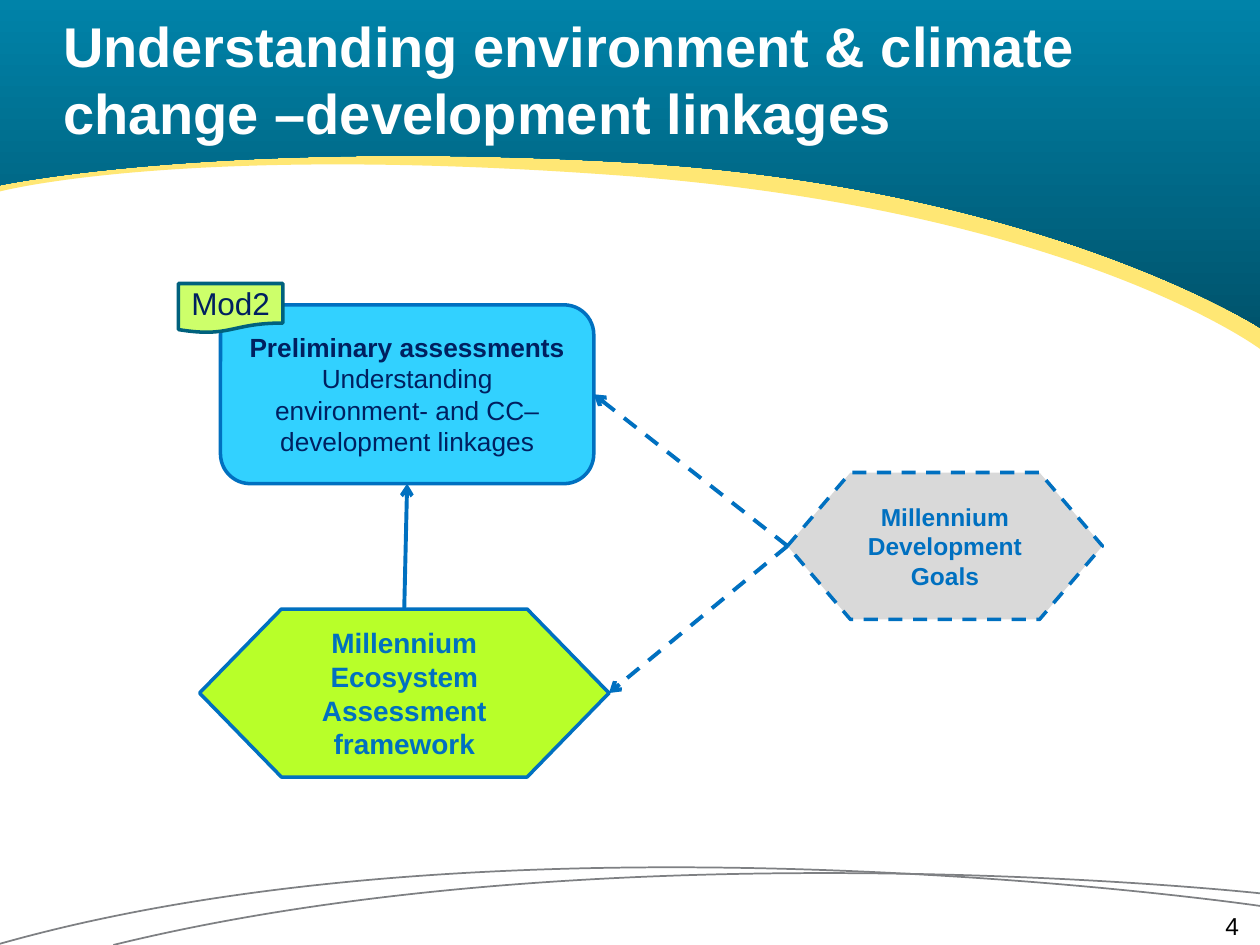
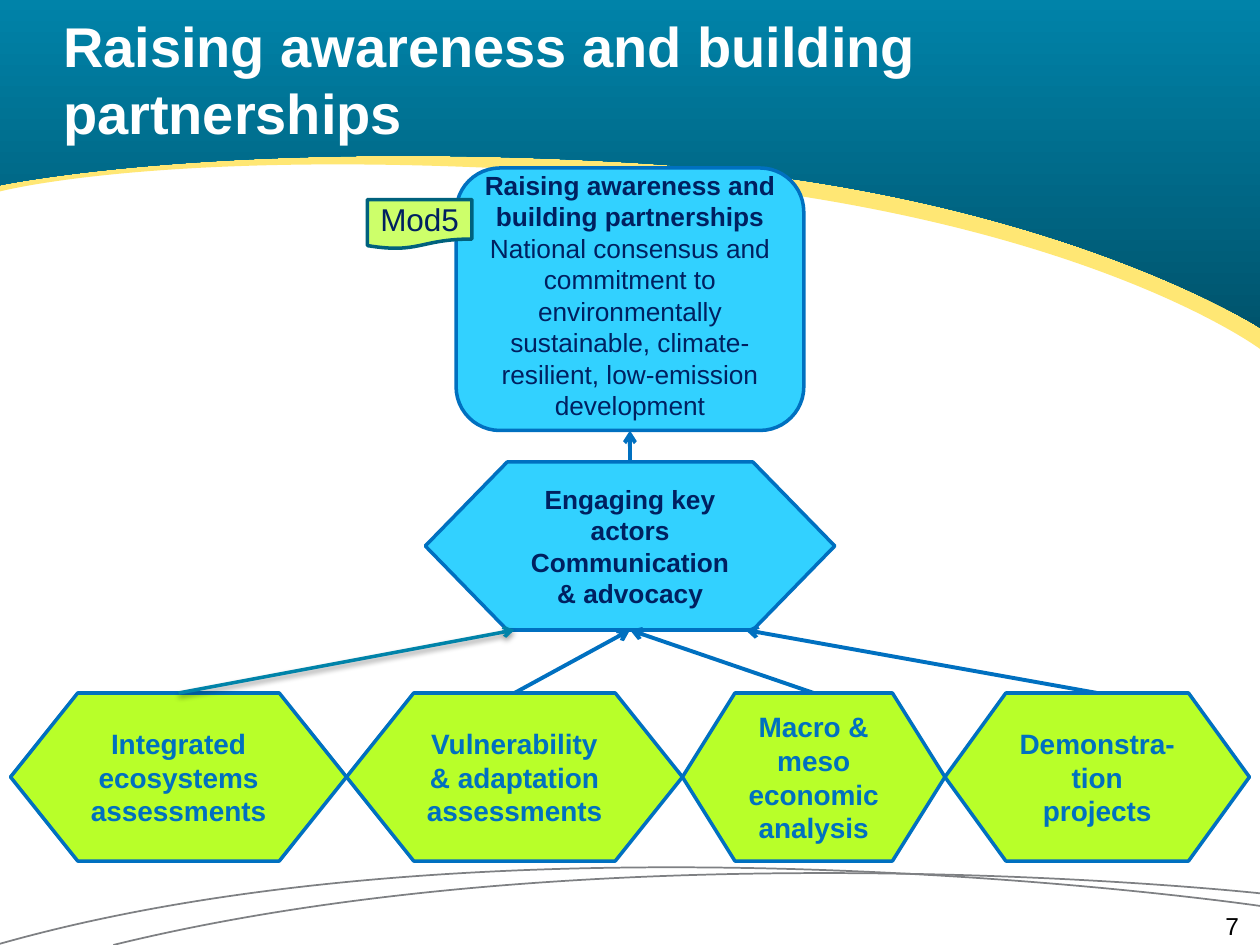
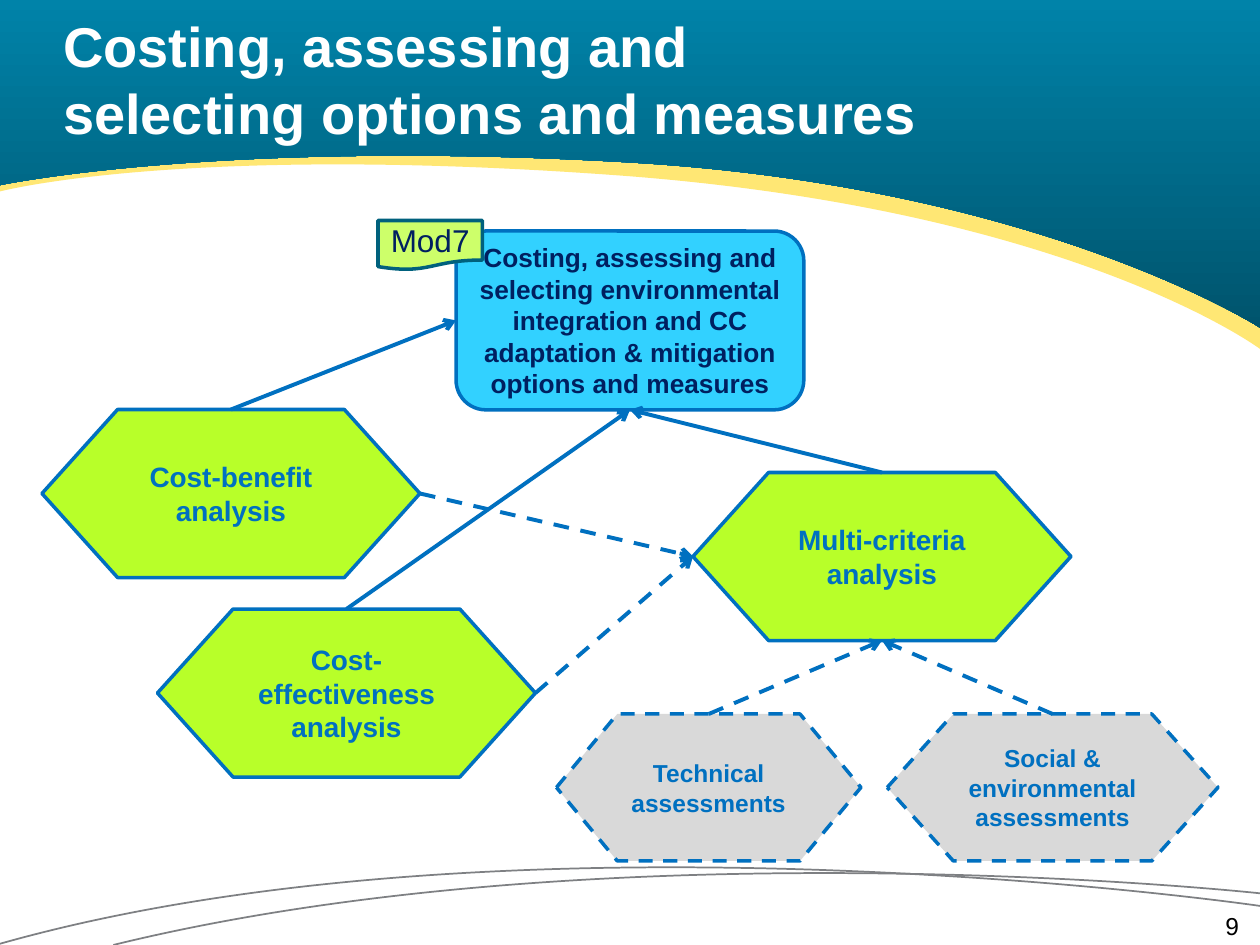
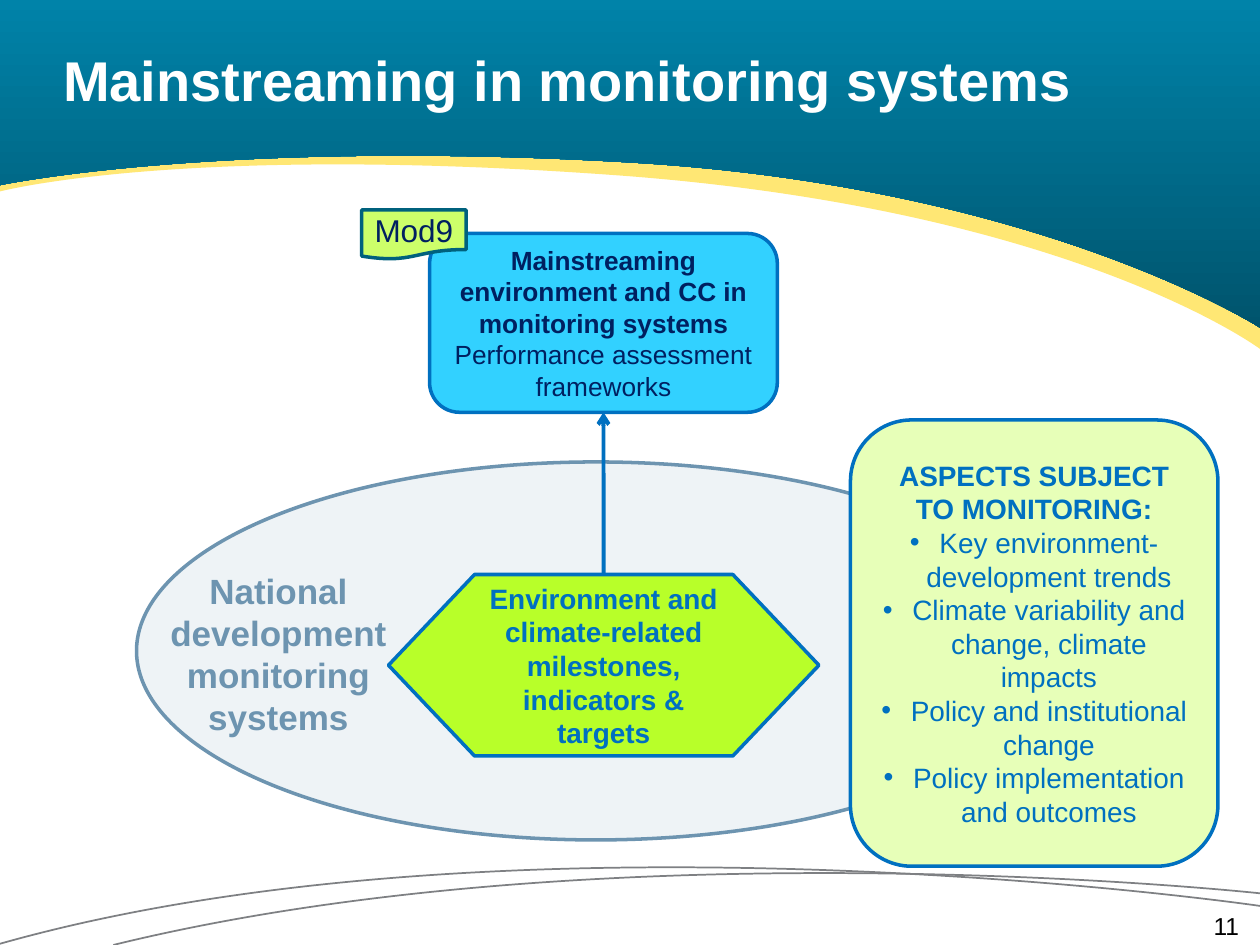
from lxml import etree
from pptx import Presentation
from pptx import util as u
from pptx.dml import color
from pptx.enum import dml, shapes, text
from pptx.oxml import ns

Pt = u.Pt
KIND = shapes.MSO_SHAPE
LEFT, MID, RIGHT = (text.PP_ALIGN.LEFT, text.PP_ALIGN.CENTER,
                    text.PP_ALIGN.RIGHT)
TOP, WEST, BASE, EAST = range(4)
BLUE, NAVY, TEAL, SLATE = "0070C0", "002060", "0083A9", "6D94B0"
SKY, LIME, GREY = "32D1FF", "B8FF29", "D9D9D9"
WIDE, HIGH = 720, 540
BOX = 198.7

ARCS = [
    [(720, 510.5), (720, 510.5), (349.2, 470.2), (64.8, 540)],
    [(720, 517.7), (720, 517.7), (295.2, 455.8), (0, 539.3)],
]
GOLD = [(720, 199.4), (720, 199.4), (614.9, 121), (360.7, 100.8),
        (105.8, 81.4), (0, 109.4), (0, 109.4)]
SEA = [(720, 187.2), (720, 187.2), (594.7, 106.6), (360.7, 92.9),
       (126, 79.2), (0, 105.8), (0, 105.8)]


def rgb(code):
    return color.RGBColor.from_string(code)


def add(parent, tag, **attrs):
    node = etree.SubElement(parent, ns.qn(tag))
    for key, val in attrs.items():
        node.set(key, str(val))
    return node


def bend(form, count):
    lines = list(form.element.iter(ns.qn("a:lnTo")))[:count]
    for i in range(0, count, 3):
        arc = etree.Element(ns.qn("a:cubicBezTo"))
        lines[i].addprevious(arc)
        for line in lines[i:i + 3]:
            arc.append(line[0])
            line.getparent().remove(line)


def write(frame, lines, size=16, ink=BLUE, bold=True, align=MID,
          anchor=text.MSO_ANCHOR.MIDDLE, inset=None):
    frame.word_wrap = True
    frame.auto_size = text.MSO_AUTO_SIZE.NONE
    frame.vertical_anchor = anchor
    if inset is not None:
        frame.margin_left = frame.margin_right = Pt(inset)
        frame.margin_top = frame.margin_bottom = Pt(inset)
    for i, line in enumerate([lines] if isinstance(lines, str) else lines):
        words, opts = line if isinstance(line, tuple) else (line, {})
        para = frame.paragraphs[0] if i == 0 else frame.add_paragraph()
        para.text = words
        para.alignment = align
        if opts.get("dot"):
            props = para._p.get_or_add_pPr()
            props.set("marL", str(Pt(16.88)))
            props.set("indent", str(-Pt(16.88)))
            add(props, "a:buFont", typeface="Arial")
            add(props, "a:buChar", char="•")
        for run in para.runs:
            font = run.font
            font.name, font.size = "Arial", Pt(size)
            font.bold = opts.get("bold", bold)
            font.color.rgb = rgb(ink)


def port(shape, side):
    x, y, w, h = shape.left, shape.top, shape.width, shape.height
    return [(x + w // 2, y), (x, y + h // 2),
            (x + w // 2, y + h), (x + w, y + h // 2)][side]


class Deck:
    def __init__(self):
        self.file = Presentation()
        self.file.slide_width, self.file.slide_height = Pt(WIDE), Pt(HIGH)
        self.base = self.file.slide_layouts[5]
        self.slide = None

    def page(self, title, number):
        first = self.slide is None
        self.slide = self.file.slides.add_slide(self.base)
        if first:
            self.decor()
        head = self.slide.shapes.title
        head.left, head.top, head.width, head.height = map(
            Pt, (36, 0, 672, 90))
        write(head.text_frame, title, size=32, ink="FFFFFF", align=LEFT,
              inset=0)
        self.label(number, 540, 520.5, 168, 13, size=14, ink="000000",
                   bold=False, align=RIGHT, inset=0)

    def decor(self):
        forms = [self.free(arc, line="7E8083") for arc in ARCS]
        edge = [(0, -0.7), (WIDE, -0.7)]
        forms += [self.free(GOLD, edge, fill="FFE774"),
                  self.free(SEA, edge)]
        blend = forms[-1].fill
        blend.gradient()
        blend.gradient_angle = 270
        for stop, code in zip(blend.gradient_stops, (TEAL, "00546D")):
            stop.color.rgb = rgb(code)
        tree = self.base.element.cSld.spTree
        for i, form in enumerate(forms):
            tree.insert(2 + i, form.element)

    def free(self, knots, edge=(), fill=None, line=None):
        dots = [(Pt(x), Pt(y)) for x, y in knots + list(edge)]
        path = self.slide.shapes.build_freeform(*dots[0])
        path.add_line_segments(dots[1:], close=bool(edge))
        form = path.convert_to_shape()
        bend(form, len(knots) - 1)
        self.paint(form, fill, line, 1)
        return form

    def paint(self, shape, fill, line, width):
        shape.shadow.inherit = False
        for part, code in ((shape.fill, fill), (shape.line.fill, line)):
            if code:
                part.solid()
                part.fore_color.rgb = rgb(code)
            else:
                part.background()
        if line:
            shape.line.width = Pt(width)

    def shape(self, kind, lines, x, y, w, h, fill, line=BLUE, dash=False,
              **form):
        item = self.slide.shapes.add_shape(kind, *map(Pt, (x, y, w, h)))
        self.paint(item, fill, line, 2)
        if dash:
            item.line.dash_style = dml.MSO_LINE.DASH
        if lines:
            write(item.text_frame, lines, **form)
        return item

    def box(self, lines, x, y, w=BOX, h=102.2):
        return self.shape(KIND.ROUNDED_RECTANGLE, lines, x, y, w, h, SKY,
                          size=15, ink=NAVY)

    def hexa(self, lines, x, y, w, h=96, fill=LIME, **form):
        return self.shape(KIND.FLOWCHART_PREPARATION, lines, x, y, w, h,
                          fill, **form)

    def ghost(self, lines, x, y, w):
        return self.hexa(lines, x, y, w, 84, GREY, dash=True, size=14)

    def tag(self, words, x, y):
        self.shape(KIND.FLOWCHART_DOCUMENT, words, x, y, 59.6, 28.2,
                   "CDFF6A", "00617D", size=18, ink=NAVY, bold=False)

    def label(self, words, x, y, w, h, **form):
        item = self.slide.shapes.add_textbox(*map(Pt, (x, y, w, h)))
        write(item.text_frame, words, anchor=text.MSO_ANCHOR.TOP, **form)

    def arrow(self, start, out, end, into=None, dash=False, ink=BLUE,
              width=2.25, shade=False):
        free = into is None
        goal = tuple(map(Pt, end)) if free else port(end, into)
        link = self.slide.shapes.add_connector(
            shapes.MSO_CONNECTOR.STRAIGHT, *port(start, out), *goal)
        link.begin_connect(start, out)
        if not free:
            link.end_connect(end, into)
        link.line.color.rgb = rgb(ink)
        link.line.width = Pt(width)
        if dash:
            link.line.dash_style = dml.MSO_LINE.DASH
        props = link.element.spPr
        add(props.find(ns.qn("a:ln")), "a:tailEnd", type="arrow")
        glow = add(props, "a:effectLst")
        if shade:
            cast = add(glow, "a:outerShdw", blurRad=Pt(3.1), dist=Pt(1.6),
                       dir=5400000, rotWithShape=0)
            add(add(cast, "a:srgbClr", val="000000"), "a:alpha", val=38000)


def link_page(deck):
    deck.page("Understanding environment & climate change "
              "–development linkages", "4")
    box = deck.box(["Preliminary assessments",
                    ("Understanding environment- and CC–development linkages",
                     {"bold": False})], 126, 174.2, 213.3)
    frame = deck.hexa("Millennium Ecosystem Assessment framework",
                      114, 348, 234)
    goals = deck.ghost("Millennium Development Goals", 450, 270, 180)
    deck.tag("Mod2", 102, 162)
    deck.arrow(frame, TOP, box, BASE)
    deck.arrow(goals, WEST, box, EAST, dash=True)
    deck.arrow(goals, WEST, frame, EAST, dash=True)


def aware_page(deck):
    deck.page("Raising awareness and building\vpartnerships", "7")
    box = deck.box(["Raising awareness and building partnerships",
                    ("National consensus and commitment to environmentally "
                     "sustainable, climate-resilient, low-emission "
                     "development", {"bold": False})], 260.65, 96, h=150)
    box.text_frame.margin_bottom = Pt(8.2)
    deck.tag("Mod5", 210, 114)
    key = deck.hexa(["Engaging key actors", "Communication & advocacy"],
                    243, 264, 234, fill=SKY, size=15, ink=NAVY)
    row, x = [], 6
    for words, w in (("Integrated ecosystems assessments", 192),
                     ("Vulnerability & adaptation assessments", 192),
                     ("Macro & meso economic analysis", 150),
                     ("Demonstra-tion projects", 174)):
        row.append(deck.hexa(words, x, 396, w))
        x += w
    deck.arrow(key, TOP, box, BASE)
    for item in row[1:3]:
        deck.arrow(item, TOP, key, BASE)
    deck.arrow(row[3], TOP, (426, 360))
    deck.arrow(row[0], TOP, (294, 360), ink=TEAL, width=2, shade=True)


def cost_page(deck):
    deck.page("Costing, assessing and\vselecting options and measures", "9")
    box = deck.box("Costing, assessing and selecting environmental "
                   "integration and CC adaptation & mitigation options "
                   "and measures", 260.65, 132)
    gain = deck.hexa("Cost-benefit analysis", 24, 234, 216)
    multi = deck.hexa("Multi-criteria analysis", 396, 270, 216)
    deck.tag("Mod7", 216, 126)
    cost = deck.hexa("Cost-effectiveness analysis", 90, 348, 216)
    tech = deck.ghost("Technical assessments", 318, 408, 174)
    social = deck.ghost("Social & environmental assessments", 507, 408, 189)
    deck.arrow(gain, TOP, box, WEST)
    for item in (multi, cost):
        deck.arrow(item, TOP, box, BASE)
    for item in (tech, social):
        deck.arrow(item, TOP, multi, BASE, dash=True)
    for item in (cost, gain):
        deck.arrow(item, EAST, multi, WEST, dash=True)


def watch_page(deck):
    deck.page("Mainstreaming in monitoring systems", "11")
    deck.shape(KIND.OVAL, None, 78, 264, 525, 216, "EEF3F6", SLATE)
    box = deck.box(["Mainstreaming environment and CC in monitoring systems",
                    ("Performance assessment frameworks", {"bold": False})],
                   245.5, 133.4)
    marks = deck.hexa("Environment and climate-related milestones, "
                      "indicators & targets", 222, 328.3, 246, 103.7)
    deck.arrow(marks, TOP, box, BASE)
    deck.tag("Mod9", 206.7, 120)
    deck.label("National development monitoring systems",
               90, 322, 138.2, 104.5, size=20, ink=SLATE)
    points = ["Key environment-development trends",
              "Climate variability and change, climate impacts",
              "Policy and institutional change",
              "Policy implementation and outcomes"]
    deck.shape(KIND.ROUNDED_RECTANGLE,
               ["ASPECTS SUBJECT TO MONITORING:"]
               + [(p, {"bold": False, "dot": True}) for p in points],
               486, 240, 210, 255, "E7FFB8")


def main():
    deck = Deck()
    for build in (link_page, aware_page, cost_page, watch_page):
        build(deck)
    deck.file.save("out.pptx")


if __name__ == "__main__":
    main()
